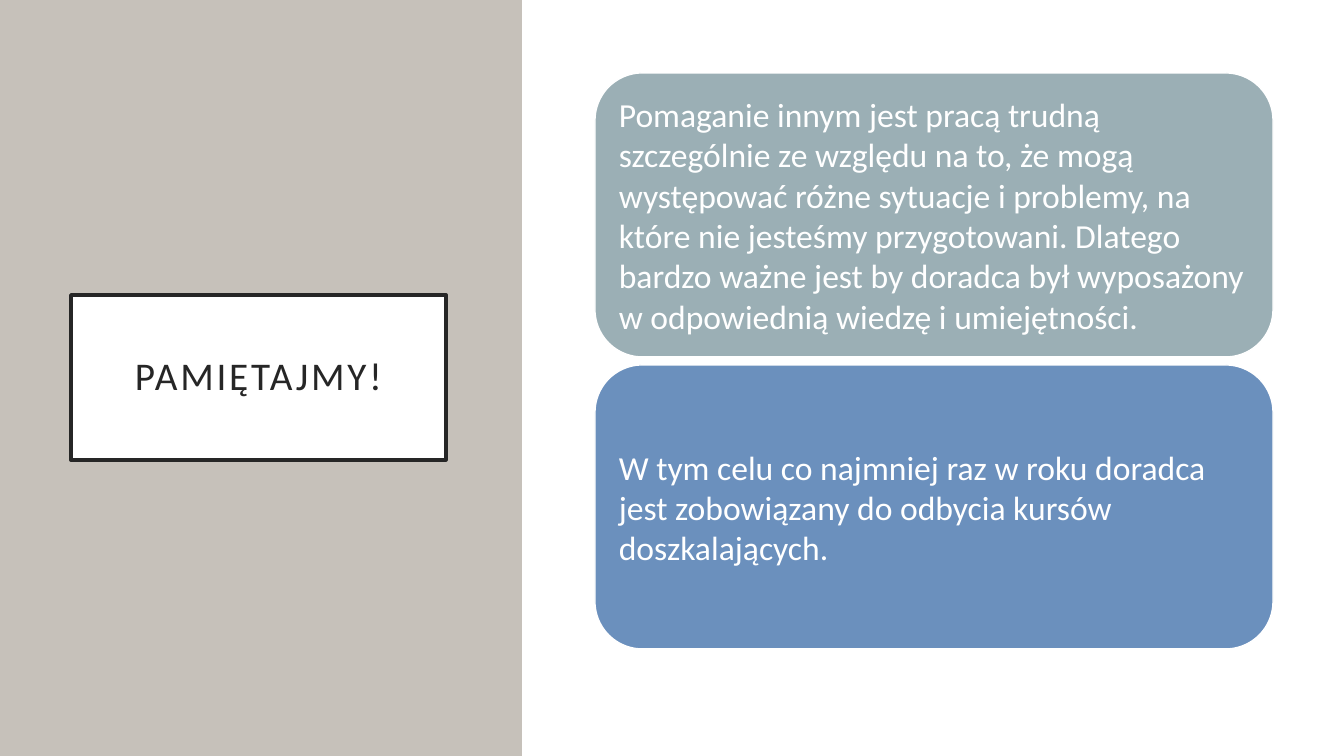
import dataclasses

import pptx
import pptx.dml.color
import pptx.enum.shapes
import pptx.enum.text
import pptx.util

SLIDE_W, SLIDE_H = 1344, 756
EMU_PER_PX = 12192000 / SLIDE_W
SHAPE = pptx.enum.shapes.MSO_SHAPE
ALIGN = pptx.enum.text.PP_ALIGN

TITLE = "PAMIĘTAJMY!"
REMINDERS = [
    "Pomaganie innym jest pracą trudną szczególnie ze względu na to, że mogą "
    "występować różne sytuacje i problemy, na które nie jesteśmy przygotowani. "
    "Dlatego bardzo ważne jest by doradca był wyposażony w odpowiednią wiedzę "
    "i umiejętności.",
    "W tym celu co najmniej raz w roku doradca jest zobowiązany do odbycia "
    "kursów doszkalających.",
]


@dataclasses.dataclass(frozen=True)
class Theme:
    font: str = "Calibri"
    title_size: int = 28
    body_size: int = 24
    ink: str = "262626"
    white: str = "FFFFFF"
    band: str = "C6C1BA"
    cards: tuple = ("9BAFB5", "6B90BD")


THEME = Theme()


def px(length):
    return pptx.util.Emu(round(length * EMU_PER_PX))


def rgb(code):
    return pptx.dml.color.RGBColor.from_string(code)


def add_box(slide, box, fill, kind=SHAPE.RECTANGLE, line=None, line_width=1):
    shape = slide.shapes.add_shape(kind, *map(px, box))
    shape.shadow.inherit = False
    shape.fill.solid()
    shape.fill.fore_color.rgb = rgb(fill)
    if line:
        shape.line.color.rgb = rgb(line)
        shape.line.width = pptx.util.Pt(line_width)
    else:
        shape.line.fill.background()
    return shape


def write_text(shape, text, *, size, color, align, inset, line_spacing=1.0, tracking=0):
    """Fill the shape with one paragraph; inset is in px, tracking in points."""
    frame = shape.text_frame
    frame.word_wrap = True
    frame.vertical_anchor = pptx.enum.text.MSO_ANCHOR.MIDDLE
    frame.margin_left = frame.margin_right = px(inset)
    frame.margin_top = frame.margin_bottom = px(inset)
    paragraph = frame.paragraphs[0]
    paragraph.alignment = align
    paragraph.line_spacing = line_spacing
    run = paragraph.add_run()
    run.text = text
    run.font.name = THEME.font
    run.font.size = pptx.util.Pt(size)
    run.font.color.rgb = rgb(color)
    if tracking:
        run.font._element.set("spc", str(tracking * 100))


def add_title_panel(slide, box):
    left, top, width, height = box
    add_box(slide, box, THEME.band)
    title_w, title_h = 375, 165
    title_box = (left + 71, top + (height - title_h) // 2, title_w, title_h)
    title = add_box(slide, title_box, THEME.white, line=THEME.ink, line_width=2.5)
    write_text(title, TITLE, size=THEME.title_size, color=THEME.ink,
               align=ALIGN.CENTER, inset=20, line_spacing=0.9, tracking=2)


def add_reminder_cards(slide, box, gap=8):
    """Stack one equally tall card per reminder inside the box."""
    left, top, width, height = box
    card_h = (height - gap * (len(REMINDERS) - 1)) // len(REMINDERS)
    for row, (reminder, fill) in enumerate(zip(REMINDERS, THEME.cards)):
        card_box = (left, top + row * (card_h + gap), width, card_h)
        card = add_box(slide, card_box, fill, SHAPE.ROUNDED_RECTANGLE, line=THEME.white)
        # The rounded corners already inset the text by about 14 px.
        write_text(card, reminder, size=THEME.body_size, color=THEME.white,
                   align=ALIGN.LEFT, inset=10)


def main():
    deck = pptx.Presentation()
    deck.slide_width, deck.slide_height = px(SLIDE_W), px(SLIDE_H)
    slide = deck.slides.add_slide(deck.slide_layouts[6])
    add_title_panel(slide, (0, 0, 522, SLIDE_H))
    add_reminder_cards(slide, (595, 73, 678, 577))
    deck.save("out.pptx")


if __name__ == "__main__":
    main()
